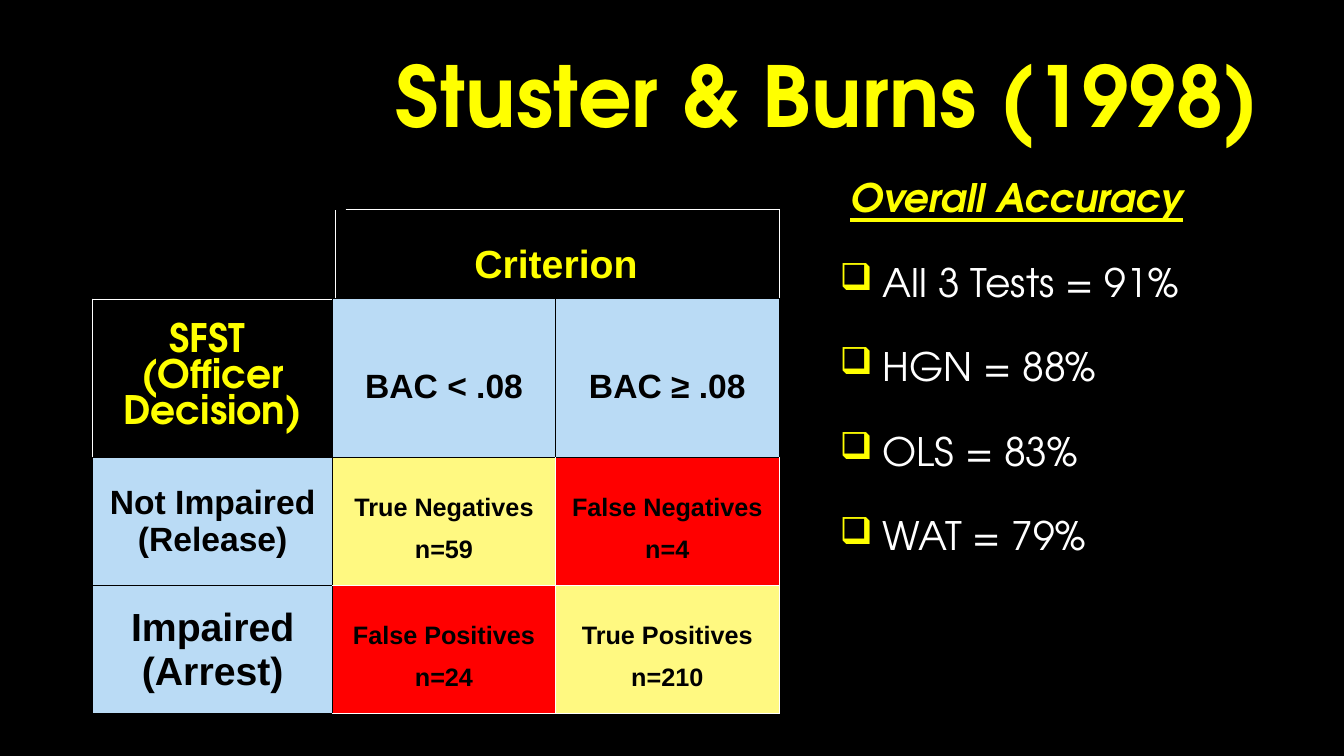
import pptx
import pptx.dml.color
import pptx.enum.shapes
import pptx.enum.text
import pptx.oxml
import pptx.oxml.ns
import pptx.util

RGBColor = pptx.dml.color.RGBColor
BLACK = RGBColor(0x00, 0x00, 0x00)
WHITE = RGBColor(0xFF, 0xFF, 0xFF)
YELLOW = RGBColor(0xFF, 0xFF, 0x00)
BLUE = RGBColor(0xBA, 0xDB, 0xF5)
CREAM = RGBColor(0xFF, 0xF9, 0x81)
RED = RGBColor(0xFF, 0x00, 0x00)

DISPLAY, BODY = "TeX Gyre Adventor", "Arial"
ALIGN = pptx.enum.text.PP_ALIGN
ANCHOR = pptx.enum.text.MSO_ANCHOR
NS = pptx.oxml.ns.nsdecls("a")


class Deck:
    def __init__(self, width, height):
        self.prs = pptx.Presentation()
        self.prs.slide_width = pptx.util.Inches(width)
        self.prs.slide_height = pptx.util.Inches(height)
        self.s = self.prs.slides.add_slide(self.prs.slide_layouts[6])
        fill = self.s.background.fill
        fill.solid()
        fill.fore_color.rgb = BLACK

    def x(self, share):
        return round(self.prs.slide_width * share / 100)

    def y(self, share):
        return round(self.prs.slide_height * share / 100)

    def box(self, left, top, width, height):
        return self.x(left), self.y(top), self.x(width), self.y(height)

    def style(self, target, values):
        for name, value in values.items():
            setattr(target, name, value)

    def add_text(self, p, text, color, font, layout):
        r = p.add_run()
        r.text = text
        self.style(r.font, font)
        r.font.color.rgb = color
        self.style(p, layout)

    def text(self, area, anchor):
        tf = self.s.shapes.add_textbox(*self.box(*area)).text_frame
        self.style(tf, {"word_wrap": True, "vertical_anchor": anchor})
        return tf

    def indent(self, p, left, hanging=0, bullet=None):
        pPr = p._p.get_or_add_pPr()
        pPr.set("marL", str(self.x(left)))
        pPr.set("indent", str(-self.x(hanging)))
        if bullet:
            for xml in (f'<a:buClr {NS}><a:srgbClr val="{YELLOW}"/></a:buClr>',
                        f'<a:buSzPct {NS} val="95000"/>',
                        f'<a:buChar {NS} char="{bullet}"/>'):
                pPr.append(pptx.oxml.parse_xml(xml))

    def table(self, area, cols, rows):
        tbl = self.s.shapes.add_table(len(rows), len(cols), *self.box(*area)).table
        self.style(tbl, {"first_row": False, "horz_banding": False})
        for col, share in zip(tbl.columns, cols):
            col.width = self.x(share)
        for row, share in zip(tbl.rows, rows):
            row.height = self.y(share)
        return tbl

    def cell(self, cell, lines, fill, color, font, spacing, borders):
        self.style(cell, {"vertical_anchor": ANCHOR.MIDDLE, "margin_left": 0,
                          "margin_right": 0, "margin_top": 0, "margin_bottom": 0})
        if fill is None:
            cell.fill.background()
        else:
            cell.fill.solid()
            cell.fill.fore_color.rgb = fill
        tf = cell.text_frame
        for i, line in enumerate(lines):
            p = tf.paragraphs[0] if i == 0 else tf.add_paragraph()
            self.add_text(p, line, color, font,
                          {"alignment": ALIGN.CENTER, "line_spacing": spacing})
        self.borders(cell, borders)

    def borders(self, cell, borders):
        tcPr = cell._tc.get_or_add_tcPr()
        for i, side in enumerate("LRTB"):
            line, width = borders.get(side, (BLACK, 1))
            tcPr.insert(i, pptx.oxml.parse_xml(
                f'<a:ln{side} {NS} w="{pptx.util.Pt(width)}"><a:solidFill>'
                f'<a:srgbClr val="{line}"/></a:solidFill></a:ln{side}>'))

    def rect(self, area, color):
        sp = self.s.shapes.add_shape(
            pptx.enum.shapes.MSO_SHAPE.RECTANGLE, *self.box(*area))
        sp.shadow.inherit = False
        sp.fill.solid()
        sp.fill.fore_color.rgb = color
        sp.line.color.rgb = color
        sp.line.width = pptx.util.Pt(1)

    def line(self, x1, y1, x2, y2, color, width):
        c = self.s.shapes.add_connector(
            pptx.enum.shapes.MSO_CONNECTOR.STRAIGHT,
            self.x(x1), self.y(y1), self.x(x2), self.y(y2))
        c.line.color.rgb = color
        c.line.width = pptx.util.Pt(width)
        c._element.spPr.append(pptx.oxml.parse_xml(f"<a:effectLst {NS}/>"))


def bold(name, size):
    return {"name": name, "size": pptx.util.Pt(size), "bold": True}


def edges(color, sides, width=1):
    return {side: (color, width) for side in sides}


def main():
    deck = Deck(13.33, 7.5)

    title = deck.text((23.78, 3.87, 70.67, 18.8), ANCHOR.MIDDLE)
    deck.add_text(title.paragraphs[0], "Stuster & Burns (1998)", YELLOW,
                  bold(DISPLAY, 60), {"alignment": ALIGN.RIGHT, "line_spacing": 0.9})

    left, top, header = 6.9, 27.73, 11.73
    cols = (17.85, 16.58, 16.65)
    rows = (header, 21.07, 16.93, 16.93)
    tbl = deck.table((left, top, sum(cols), sum(rows)), cols, rows)
    tbl.cell(0, 1).merge(tbl.cell(0, 2))

    big, medium, small = (bold(BODY, size) for size in (28, 24, 18))
    criterion = edges(WHITE, "LTR")
    cells = (
        (0, 0, (), WHITE, BLACK, big, 1.0, edges(WHITE, "LTR") | edges(WHITE, "B", 3)),
        (0, 1, ("Criterion",), None, YELLOW, big, 1.5, criterion),
        (0, 2, (), None, YELLOW, big, 1.5, criterion),
        (1, 0, ("SFST ", "(Officer Decision)"), None, YELLOW, bold(DISPLAY, 28), 1.0,
         edges(WHITE, "L") | edges(WHITE, "T", 3)),
        (1, 1, ("BAC < .08",), BLUE, BLACK, medium, 1.5, {}),
        (1, 2, ("BAC ≥ .08",), BLUE, BLACK, medium, 1.5, {}),
        (2, 0, ("Not Impaired", "(Release)"), BLUE, BLACK, medium, 1.0, {}),
        (2, 1, ("True Negatives", "n=59"), CREAM, BLACK, small, 1.5, edges(WHITE, "RB")),
        (2, 2, ("False Negatives", "n=4"), RED, BLACK, small, 1.5, edges(WHITE, "LRB")),
        (3, 0, ("Impaired", "(Arrest)"), BLUE, BLACK, big, 1.0, {}),
        (3, 1, ("False Positives", "n=24"), RED, BLACK, small, 1.5, edges(WHITE, "TRB")),
        (3, 2, ("True Positives", "n=210"), CREAM, BLACK, small, 1.5, edges(WHITE, "LTRB")),
    )
    for row, col, *content in cells:
        deck.cell(tbl.cell(row, col), *content)

    accuracy = deck.text((61.74, 22.93, 36.31, 68.8), ANCHOR.TOP)
    pitch = pptx.util.Pt(30.2)
    p = accuracy.paragraphs[0]
    deck.indent(p, 0.8)
    deck.add_text(p, "Overall Accuracy", YELLOW,
                  bold(DISPLAY, 28) | {"italic": True, "underline": True},
                  {"line_spacing": pitch})
    for test, rate in (("All 3 Tests", 91), ("HGN", 88), ("OLS", 83), ("WAT", 79)):
        p = accuracy.add_paragraph()
        deck.indent(p, 3.2, 3.2, "❑")
        deck.add_text(p, f"{test} = {rate}%", WHITE,
                      {"name": DISPLAY, "size": pptx.util.Pt(28)},
                      {"line_spacing": pitch, "space_before": pitch})

    deck.rect((left, top, 18.83, header), BLACK)
    deck.line(24.98, top + header, 24.98, top, WHITE, 0.75)

    deck.prs.save("out.pptx")


if __name__ == "__main__":
    main()
